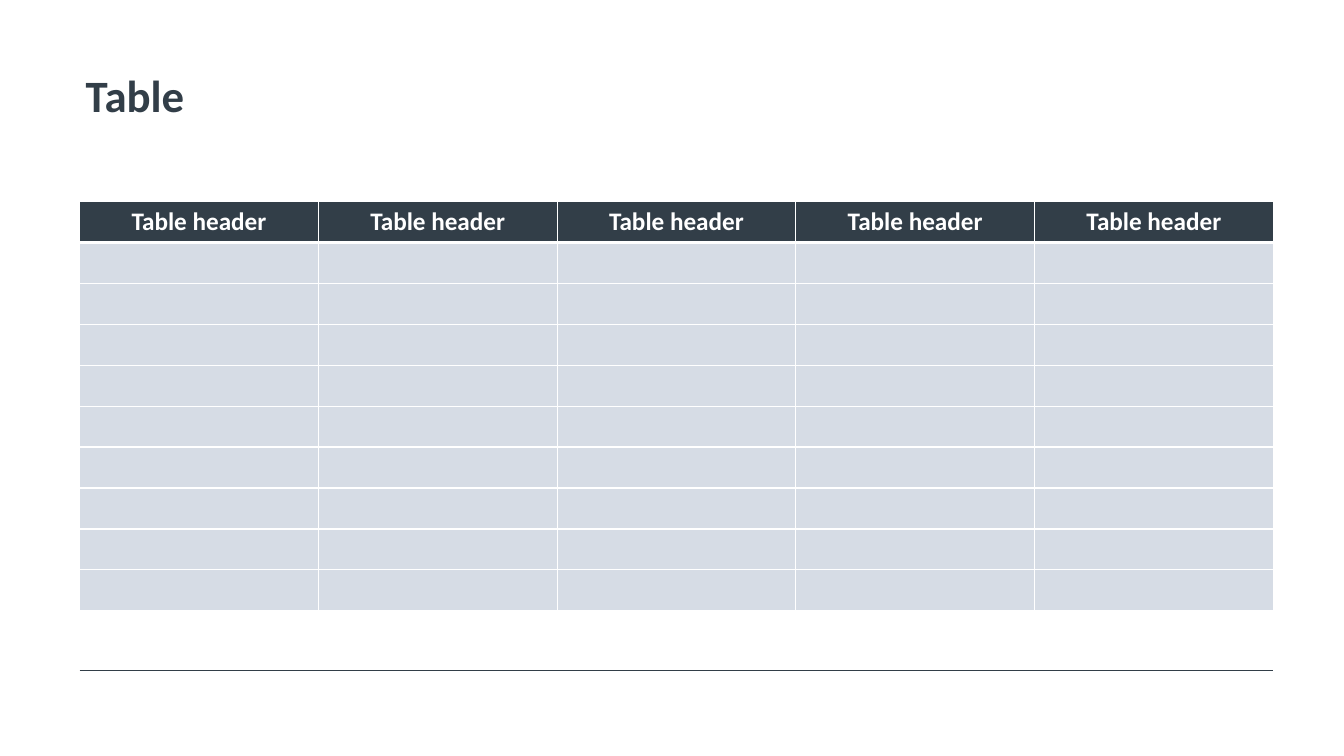
from dataclasses import dataclass

from lxml.etree import SubElement
from pptx import Presentation
from pptx.dml.color import RGBColor as Rgb
from pptx.enum.shapes import MSO_CONNECTOR as Connector
from pptx.enum.text import MSO_ANCHOR as Anchor, MSO_AUTO_SIZE as AutoSize, PP_ALIGN as Align
from pptx.oxml.ns import qn
from pptx.util import Inches, Pt


@dataclass(frozen=True)
class Theme:
    font: str = "Calibri"
    dark: str = "323E48"
    light: str = "D6DCE5"
    white: str = "FFFFFF"
    title_size: int = 32
    table_size: int = 18
    rule_width: float = 0.5
    grid_width: int = 1
    header_width: int = 3


THEME = Theme()

# Page grid, in inches
PAGE_WIDTH, PAGE_HEIGHT = 13.33, 7.5
LEFT, CONTENT_WIDTH = 0.79, 11.84
TITLE_LEFT, TITLE_TOP, TITLE_HEIGHT = 0.75, 0.68, 0.8
TABLE_TOP, TABLE_HEIGHT = 2, 4.06
RULE_TOP = 6.65

HEADERS = ["Table header"] * 5
BODY_ROWS = 9


def style_font(font, size, color):
    font.name = THEME.font
    font.size = Pt(size)
    font.bold = True
    font.color.rgb = Rgb.from_string(color)


def add_title(slide, text):
    title = slide.shapes.title
    title.left, title.top = Inches(TITLE_LEFT), Inches(TITLE_TOP)
    title.width, title.height = Inches(CONTENT_WIDTH), Inches(TITLE_HEIGHT)
    frame = title.text_frame
    frame.text = text
    frame.word_wrap = True
    frame.auto_size = AutoSize.NONE
    frame.vertical_anchor = Anchor.TOP
    heading = frame.paragraphs[0]
    heading.alignment = Align.LEFT
    heading.line_spacing = 0.9
    style_font(heading.runs[0].font, THEME.title_size, THEME.dark)


def add_footer_rule(slide):
    rule = slide.shapes.add_connector(
        Connector.STRAIGHT, Inches(LEFT), Inches(RULE_TOP),
        Inches(LEFT + CONTENT_WIDTH), Inches(RULE_TOP))
    rule.line.color.rgb = Rgb.from_string(THEME.dark)
    rule.line.width = Pt(THEME.rule_width)
    SubElement(rule.element.spPr, qn("a:effectLst"))


def set_borders(cell, top, bottom):
    """Draw white borders, with the given top and bottom widths in points."""
    properties = cell._tc.get_or_add_tcPr()
    widths = {"lnL": THEME.grid_width, "lnR": THEME.grid_width,
              "lnT": top, "lnB": bottom}
    for side, width in widths.items():
        border = SubElement(properties, qn(f"a:{side}"), w=str(Pt(width)))
        fill = SubElement(border, qn("a:solidFill"))
        SubElement(fill, qn("a:srgbClr"), val=THEME.white)


def style_cell(cell, row):
    # The heavy border separates the header from the body
    set_borders(cell,
                top=THEME.header_width if row == 1 else THEME.grid_width,
                bottom=THEME.header_width if row == 0 else THEME.grid_width)
    cell.fill.solid()
    cell.fill.fore_color.rgb = Rgb.from_string(THEME.light if row else THEME.dark)


def add_header_table(slide, headers, body_rows):
    row_count = body_rows + 1
    table = slide.shapes.add_table(
        row_count, len(headers), Inches(LEFT), Inches(TABLE_TOP),
        Inches(CONTENT_WIDTH), Inches(TABLE_HEIGHT)).table
    table.horz_banding = False
    for row in range(row_count):
        for column, header in enumerate(headers):
            cell = table.cell(row, column)
            style_cell(cell, row)
            paragraph = cell.text_frame.paragraphs[0]
            if row == 0:
                paragraph.text = header
                paragraph.alignment = Align.CENTER
                style_font(paragraph.runs[0].font, THEME.table_size, THEME.white)
            else:
                paragraph.font.size = Pt(THEME.table_size)
                paragraph.font.name = THEME.font


def main():
    deck = Presentation()
    deck.slide_width, deck.slide_height = Inches(PAGE_WIDTH), Inches(PAGE_HEIGHT)
    slide = deck.slides.add_slide(deck.slide_layouts.get_by_name("Title Only"))
    slide.background.fill.solid()
    slide.background.fill.fore_color.rgb = Rgb.from_string(THEME.white)

    add_footer_rule(slide)
    add_title(slide, "Table")
    add_header_table(slide, HEADERS, BODY_ROWS)
    deck.save("out.pptx")


if __name__ == "__main__":
    main()
